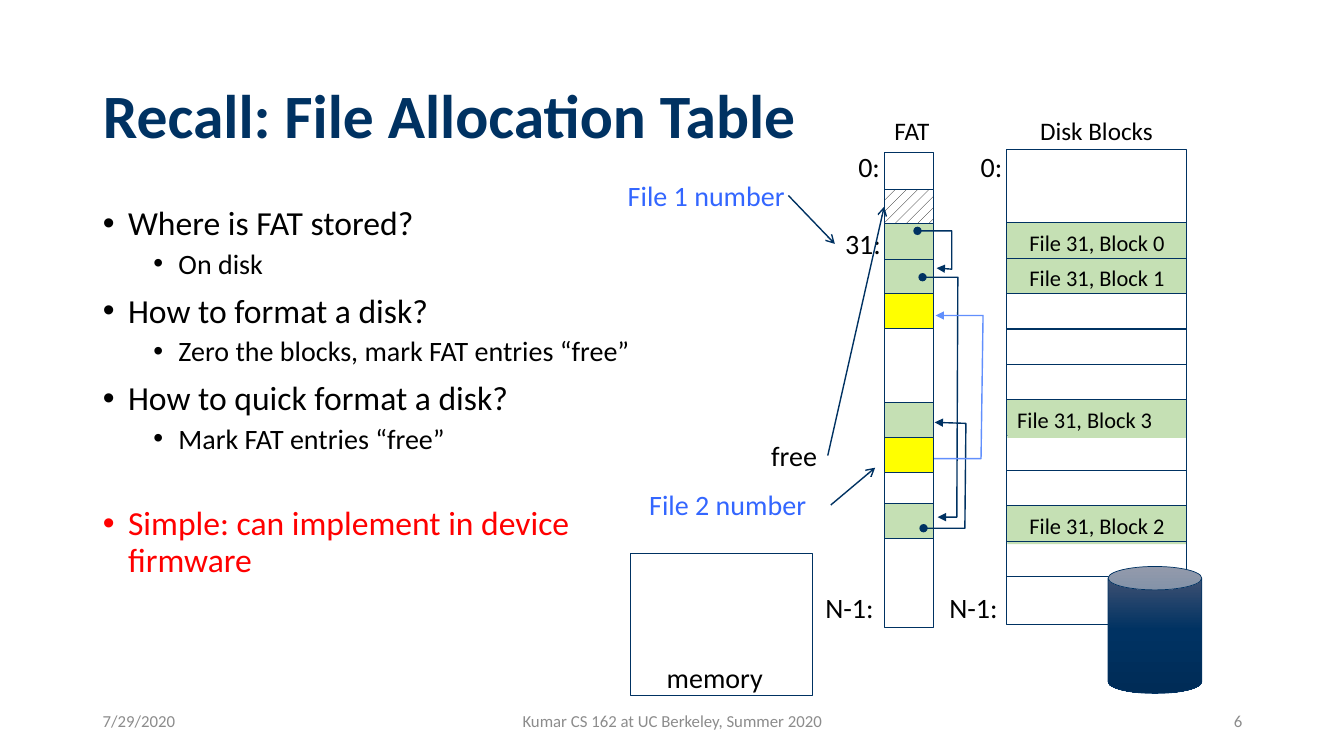
from copy import deepcopy

from lxml.etree import SubElement
from pptx import Presentation
from pptx.dml.color import RGBColor
from pptx.enum.dml import MSO_PATTERN
from pptx.enum.shapes import MSO_CONNECTOR, MSO_SHAPE
from pptx.enum.text import MSO_ANCHOR, MSO_AUTO_SIZE, PP_ALIGN
from pptx.oxml.ns import qn
from pptx.util import Inches, Pt

NAVY, GREEN, YELLOW, WHITE = "003262", "C5E0B4", "FFFF00", "FFFFFF"
BLACK, GRAY, BLUE, LINK_BLUE, RED = "000000", "8C8C8C", "3366FF", "618FFD", "FF0000"
L, C, R = PP_ALIGN.LEFT, PP_ALIGN.CENTER, PP_ALIGN.RIGHT

TITLE = "Recall: File Allocation Table"
BULLETS = [
    (0, "Where is FAT stored?", BLACK, 10),
    (1, "On disk", BLACK, 5),
    (0, "How to format a disk?", BLACK, 10),
    (1, "Zero the blocks, mark FAT entries “free”", BLACK, 5),
    (0, "How to quick format a disk?", BLACK, 10),
    (1, "Mark FAT entries “free”", BLACK, 5),
    (0, "Simple: can implement in device firmware", RED, 37),
]
FOOTERS = [
    ("7/29/2020", 0.92, 3, L),
    ("Kumar CS 162 at UC Berkeley, Summer 2020", 4.42, 4.5, C),
    ("6", 9.42, 3, R),
]
LABELS = [
    ("Disk Blocks", 10.02, 1.09, 1.71, 18, BLACK, C),
    ("FAT", 8.77, 1.09, 0.55, 18, BLACK, C),
    ("N-1:", 9.28, 5.81, 0.75, 20, BLACK, C),
    ("0:", 9.6, 1.43, 0.47, 20, BLACK, C),
    ("0:", 8.41, 1.43, 0.42, 20, BLACK, C),
    ("N-1:", 8.08, 5.81, 0.69, 20, BLACK, C),
    ("31:", 8.28, 2.2, 0.56, 20, BLACK, C),
    ("File 1 number", 6.12, 1.72, 1.77, 20, BLUE, C),
    ("memory", 6.51, 6.5, 1.16, 20, BLACK, C),
    ("free", 7.55, 4.3, 0.7, 20, BLACK, L),
    ("File 2 number", 6.34, 4.79, 1.92, 20, BLUE, L),
]
DISK_X, DISK_Y, DISK_W, ROW_H, ROW_PITCH = 9.98, 2.21, 1.79, 0.35, 0.351
DISK_ROWS = [
    (0, GREEN, "File 31, Block 0", C),
    (1, GREEN, "File 31, Block 1", C),
    (2, WHITE, None, C),
    (3, None, None, C),
    (4, None, None, C),
    (6, WHITE, None, C),
    (7, None, None, C),
    (8, GREEN, "File 31, Block 2", C),
    (9, None, None, C),
    (5, GREEN, "File 31, Block 3", L),
]
FAT_X, FAT_W = 8.77, 0.49
FILE1_CELLS = [2.22, 2.57, 3.99, 4.99]
FREE_CELL = 1.88
FILE2_CELLS = [2.91, 4.34]
FRAMES = [
    (DISK_X, 1.48, DISK_W, 4.71),
    (FAT_X, 1.51, FAT_W, 4.71),
    (6.25, 5.49, 1.81, 1.41),
]
POINTERS = [
    (7.82, 1.94, 8.28, 2.42),
    (8.21, 4.52, 8.77, 2.05),
    (8.24, 5.01, 8.68, 4.64),
]
LINKS = [
    ([(9.1, 2.29), (9.44, 2.29), (9.44, 2.67), (9.29, 2.66)], NAVY, "oval"),
    ([(9.15, 2.75), (9.5, 2.75), (9.49, 5.13), (9.3, 5.13)], NAVY, "oval"),
    ([(9.16, 5.24), (9.57, 5.24), (9.58, 4.2), (9.27, 4.19)], NAVY, "oval"),
    ([(9.14, 4.55), (9.73, 4.55), (9.75, 3.13), (9.28, 3.13)], LINK_BLUE, "diamond"),
]
DISK_GRADIENT = [(0, "4B5776"), (0.5, NAVY), (1, "002C57")]

prs = Presentation()
prs.slide_width, prs.slide_height = Inches(13.33), Inches(7.5)
s = prs.slides.add_slide(prs.slide_layouts[1])


def rgb(color):
    return RGBColor.from_string(color)


def place(sp, *box):
    sp.left, sp.top, sp.width, sp.height = map(Inches, box)


def style(p, size, color, align=L, bold=False):
    p.alignment = align
    for r in p.runs:
        r.font.name = "Calibri"
        r.font.size = Pt(size)
        r.font.bold = bold
        r.font.color.rgb = rgb(color)


def add_label(text, x, y, w, size, color, align, h=0.44, anchor=MSO_ANCHOR.TOP):
    tf = s.shapes.add_textbox(*map(Inches, (x, y, w, h))).text_frame
    tf.text = text
    tf.word_wrap = align != C
    tf.vertical_anchor = anchor
    style(tf.paragraphs[0], size, color, align)


def add_box(x, y, w, h, fill=None, line=NAVY, kind=MSO_SHAPE.RECTANGLE):
    sp = s.shapes.add_shape(kind, *map(Inches, (x, y, w, h)))
    sp.shadow.inherit = False
    if fill:
        sp.fill.solid()
        sp.fill.fore_color.rgb = rgb(fill)
    else:
        sp.fill.background()
    if line:
        sp.line.color.rgb = rgb(line)
        sp.line.width = Pt(0.5)
    else:
        sp.line.fill.background()
    return sp


def set_arrow(sp, color, **ends):
    sp.line.color.rgb = rgb(color)
    sp.line.width = Pt(1)
    ln = sp._element.spPr.find(qn("a:ln"))
    for end, kind in ends.items():
        SubElement(ln, qn(f"a:{end}End")).set("type", kind)


def add_disk_row(row, fill, text, align):
    y = DISK_Y + row * ROW_PITCH
    add_box(DISK_X, y, DISK_W, ROW_H, fill)
    if text:
        tf = add_box(DISK_X + 0.01, y + 0.01, 1.78, 0.37, fill, None).text_frame
        tf.text = text
        tf.word_wrap = True
        style(tf.paragraphs[0], 16, BLACK, align)


title, body = s.placeholders
place(title, 0.92, 0.4, 11.5, 1.45)
title.text_frame.text = TITLE
title.text_frame.vertical_anchor = MSO_ANCHOR.MIDDLE
title.text_frame.auto_size = MSO_AUTO_SIZE.NONE
style(title.text_frame.paragraphs[0], 44, NAVY, bold=True)

place(body, 0.92, 2, 5.63, 4.76)
tf = body.text_frame
tf.text = "\n".join(text for _, text, _, _ in BULLETS)
tf.auto_size = MSO_AUTO_SIZE.NONE
for p, (level, _, color, before) in zip(tf.paragraphs, BULLETS):
    style(p, 24 - 4 * level, color)
    p.level = level
    p.line_spacing = 0.9
    p.space_before = Pt(before)
    pPr = p._p.get_or_add_pPr()
    pPr.set("marL", str(Inches(0.25 + 0.5 * level)))
    pPr.set("indent", str(Inches(-0.25)))
    SubElement(pPr, qn("a:buFont")).set("typeface", "Arial")
    SubElement(pPr, qn("a:buChar")).set("char", "•")

for text, x, w, align in FOOTERS:
    add_label(text, x, 6.95, w, 12, GRAY, align, 0.4, MSO_ANCHOR.MIDDLE)

for disk_row in DISK_ROWS:
    add_disk_row(*disk_row)
for y in FILE1_CELLS:
    add_box(FAT_X, y, FAT_W, ROW_H, GREEN)
for frame in FRAMES:
    add_box(*frame)

free_cell = add_box(FAT_X, FREE_CELL, FAT_W, 0.34)
free_cell.fill.patterned()
free_cell.fill.pattern = MSO_PATTERN.PERCENT_10
free_cell.fill.fore_color.rgb = rgb(BLACK)
free_cell.fill.back_color.rgb = rgb(WHITE)

for label in LABELS:
    add_label(*label)

disk = add_box(10.99, 5.62, 0.93, 1.26, kind=MSO_SHAPE.CAN)
disk.fill.gradient()
disk.fill.gradient_angle = 270
stops = disk._element.spPr.find(".//" + qn("a:gsLst"))
stops.append(deepcopy(stops[0]))
for stop, (position, color) in zip(disk.fill.gradient_stops, DISK_GRADIENT):
    stop.position = position
    stop.color.rgb = rgb(color)

for pointer in POINTERS:
    line = s.shapes.add_connector(MSO_CONNECTOR.STRAIGHT, *map(Inches, pointer))
    set_arrow(line, NAVY, tail="arrow")
    SubElement(line._element.spPr, qn("a:effectLst"))

for points, color, head in LINKS:
    start, *rest = [(Inches(x), Inches(y)) for x, y in points]
    builder = s.shapes.build_freeform(*start)
    builder.add_line_segments(rest, close=False)
    link = builder.convert_to_shape()
    link.shadow.inherit = False
    link.fill.background()
    set_arrow(link, color, head=head, tail="triangle")

for y in FILE2_CELLS:
    add_box(FAT_X, y, FAT_W, ROW_H, YELLOW)

prs.save("out.pptx")
